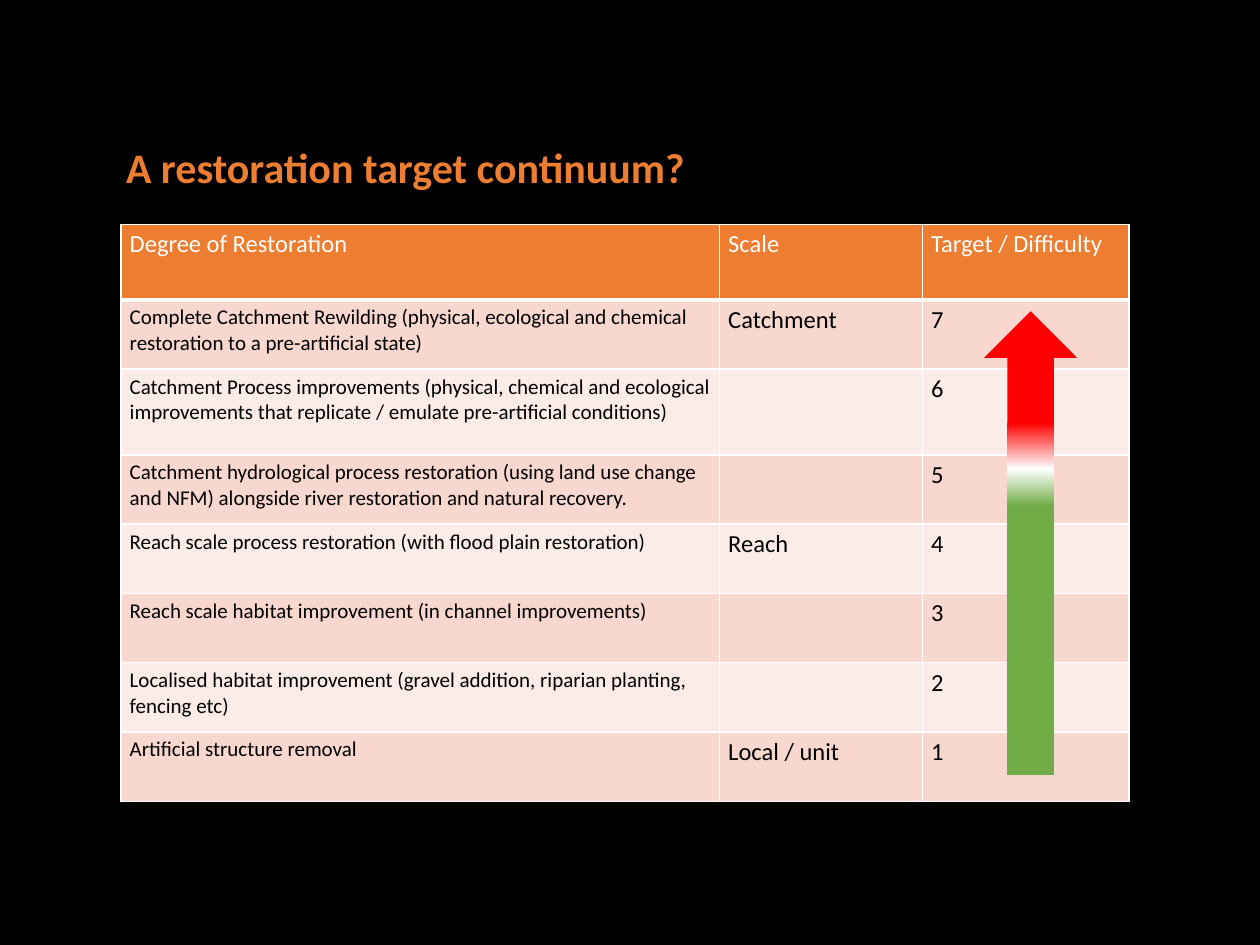
from lxml.etree import SubElement
from pptx import Presentation
from pptx.dml.color import RGBColor
from pptx.enum.shapes import MSO_SHAPE
from pptx.enum.text import MSO_ANCHOR, PP_ALIGN
from pptx.oxml.ns import qn
from pptx.util import Inches, Pt

PX = Inches(1) // 100
FONT = "Calibri"
COLORS = {
    "background": "000000",
    "accent": "ED7D31",
    "odd_row": "F8D7CE",
    "even_row": "FCECE8",
    "light": "FFFFFF",
    "dark": "000000",
    "hard": "FF0000",
    "easy": "70AD47",
}
HEADINGS = ("Degree of Restoration", "Scale", "Target / Difficulty")
TARGETS = (
    ("Complete Catchment Rewilding (physical, ecological and chemical "
     "restoration to a pre-artificial state)", "Catchment"),
    ("Catchment Process improvements (physical, chemical and ecological "
     "improvements that replicate / emulate pre-artificial conditions)", ""),
    ("Catchment hydrological process restoration (using land use change and "
     "NFM) alongside river restoration and natural recovery.", ""),
    ("Reach scale process restoration (with flood plain restoration)", "Reach"),
    ("Reach scale habitat improvement (in channel improvements)", ""),
    ("Localised habitat improvement (gravel addition, riparian planting, "
     "fencing etc)", ""),
    ("Artificial structure removal", "Local / unit"),
)
COLUMN_WIDTHS = (475, 161, 164)
ROW_HEIGHTS = (60, 55, 68, 55, 55, 55, 55, 55)


def rgb(name):
    """Return the named colour."""
    return RGBColor.from_string(COLORS[name])


def emu(box):
    """Turn a box in px into EMU lengths."""
    return [length * PX for length in box]


def style_text(paragraph, size, color, bold=False):
    """Format every run of a paragraph."""
    for run in paragraph.runs:
        run.font.name = FONT
        run.font.size = Pt(size)
        run.font.bold = bold
        run.font.color.rgb = rgb(color)


def add_title(slide, box):
    """Place the slide title in the box."""
    title = slide.shapes.title
    title.left, title.top, title.width, title.height = emu(box)
    frame = title.text_frame
    frame.text = "A restoration target continuum?"
    frame.vertical_anchor = MSO_ANCHOR.MIDDLE
    frame.word_wrap = True
    heading = frame.paragraphs[0]
    heading.alignment = PP_ALIGN.LEFT
    heading.line_spacing = 0.85
    heading.space_before = Pt(2.6)
    style_text(heading, 24, "accent", bold=True)


def add_borders(cell, bottom_width):
    """Draw light lines around a cell."""
    properties = cell._tc.get_or_add_tcPr()
    for side, width in (("L", 1), ("R", 1), ("T", 1), ("B", bottom_width)):
        line = SubElement(properties, qn(f"a:ln{side}"), w=str(Pt(width)))
        fill = SubElement(line, qn("a:solidFill"))
        SubElement(fill, qn("a:srgbClr"), val=COLORS["light"])


def fill_cell(cell, text, size, color, fill, bottom_width):
    """Write and format one table cell."""
    add_borders(cell, bottom_width)
    cell.fill.solid()
    cell.fill.fore_color.rgb = rgb(fill)
    cell.margin_left = cell.margin_right = 7 * PX
    cell.margin_top = cell.margin_bottom = 4 * PX
    cell.text = text
    style_text(cell.text_frame.paragraphs[0], size, color)


def add_targets(slide, box):
    """Place the table of restoration targets in the box."""
    levels = range(len(TARGETS), 0, -1)
    rows = [HEADINGS] + [(*target, str(level)) for target, level in zip(TARGETS, levels)]
    table = slide.shapes.add_table(len(rows), len(HEADINGS), *emu(box)).table
    for column, width in zip(table.columns, COLUMN_WIDTHS):
        column.width = width * PX
    for row, height in zip(table.rows, ROW_HEIGHTS):
        row.height = height * PX
    for r, texts in enumerate(rows):
        for c, text in enumerate(texts):
            cell = table.cell(r, c)
            if r == 0:
                fill_cell(cell, text, 14, "light", "accent", 3)
            else:
                band = "odd_row" if r % 2 else "even_row"
                fill_cell(cell, text, 14 if c else 12, "dark", band, 1)


def add_difficulty_arrow(slide, box):
    """Place the arrow that rises from easy to hard targets in the box."""
    arrow = slide.shapes.add_shape(MSO_SHAPE.UP_ARROW, *emu(box))
    arrow.shadow.inherit = False
    arrow.line.fill.background()
    arrow.fill.gradient()
    arrow.fill.gradient_angle = 270
    stops = arrow._element.spPr.find(qn("a:gradFill")).find(qn("a:gsLst"))
    stops.clear()
    for percent, name in ((24, "hard"), (34, "light"), (42, "easy")):
        stop = SubElement(stops, qn("a:gs"), pos=str(percent * 1000))
        SubElement(stop, qn("a:srgbClr"), val=COLORS[name])


def main():
    """Build and save the slide."""
    presentation = Presentation()
    presentation.slide_width, presentation.slide_height = emu((1000, 750))
    slide = presentation.slides.add_slide(presentation.slide_layouts[5])
    slide.background.fill.solid()
    slide.background.fill.fore_color.rgb = rgb("background")
    add_title(slide, (90, 116, 668, 39))
    add_targets(slide, (96, 178, sum(COLUMN_WIDTHS), sum(ROW_HEIGHTS)))
    add_difficulty_arrow(slide, (781, 247, 74, 368))
    presentation.save("out.pptx")


if __name__ == "__main__":
    main()
